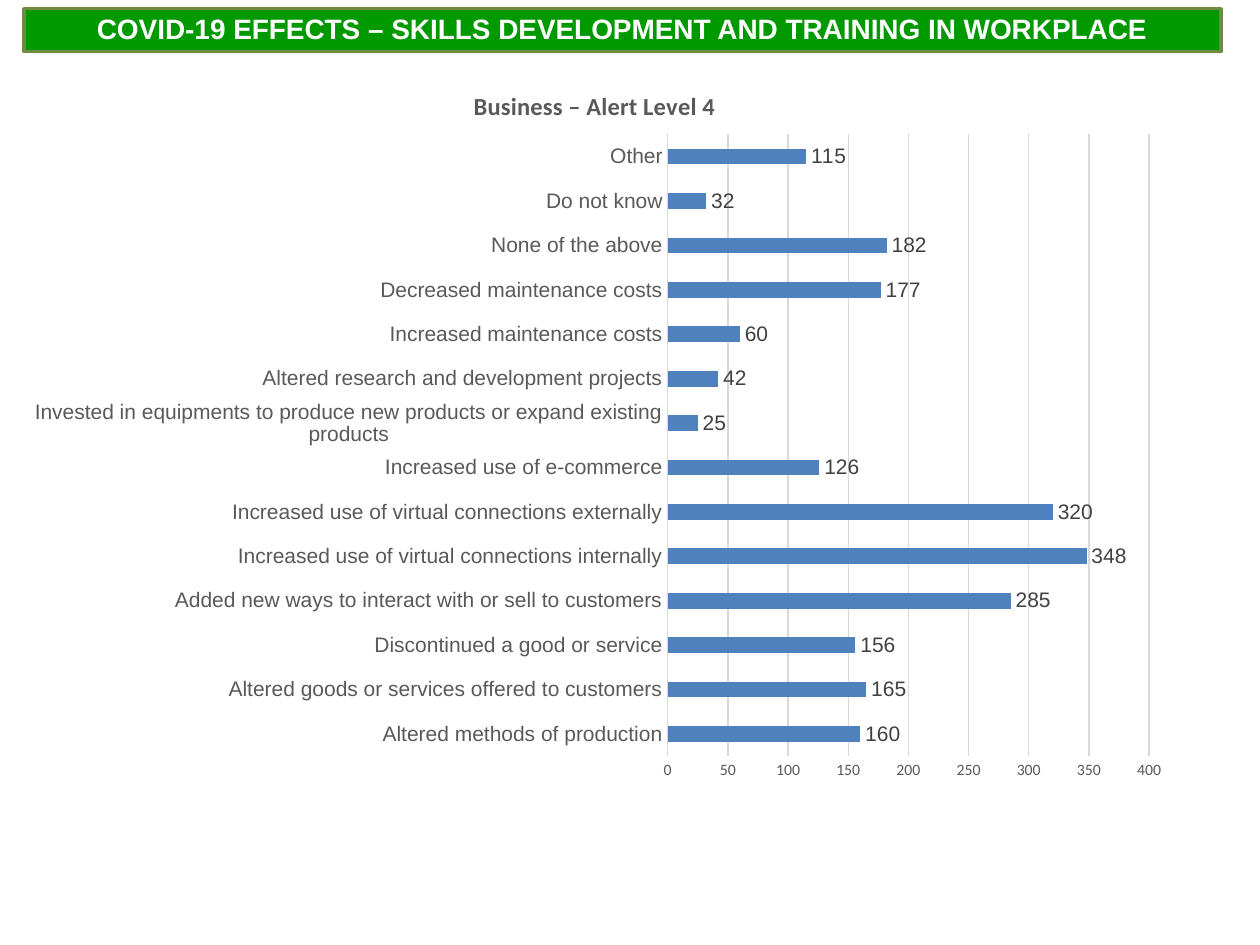
from dataclasses import dataclass

from lxml.etree import SubElement
from pptx import Presentation
from pptx.chart.data import CategoryChartData
from pptx.dml.color import RGBColor
from pptx.enum.chart import XL_CHART_TYPE as ChartType
from pptx.enum.chart import XL_LABEL_POSITION as LabelPosition
from pptx.enum.chart import XL_TICK_MARK as TickMark
from pptx.enum.shapes import MSO_SHAPE as ShapeKind
from pptx.enum.text import MSO_ANCHOR as Anchor
from pptx.enum.text import MSO_AUTO_SIZE as AutoSize
from pptx.enum.text import PP_ALIGN as Align
from pptx.oxml.ns import qn
from pptx.util import Pt


@dataclass(frozen=True)
class Theme:
    """Colours, fonts and type sizes of the slide."""
    banner: str = "009900"
    banner_line: str = "738A42"
    white: str = "FFFFFF"
    bar: str = "4F81BD"
    grid: str = "D9D9D9"
    axis_text: str = "595959"
    value_text: str = "404040"
    label_font: str = "Arial"
    chart_font: str = "Calibri"
    banner_size: int = 16
    title_size: int = 14
    label_size: int = 12
    scale_size: int = 9
    base_size: int = 10


THEME = Theme()
BANNER_TEXT = "COVID-19 EFFECTS – SKILLS DEVELOPMENT AND TRAINING IN WORKPLACE"
CHART_TITLE = "Business – Alert Level 4"
RESPONSES = {
    "Altered methods of production": 160,
    "Altered goods or services offered to customers": 165,
    "Discontinued a good or service": 156,
    "Added new ways to interact with or sell to customers": 285,
    "Increased use of virtual connections internally": 348,
    "Increased use of virtual connections externally": 320,
    "Increased use of e-commerce": 126,
    "Invested in equipments to produce new products or expand existing products": 25,
    "Altered research and development projects": 42,
    "Increased maintenance costs": 60,
    "Decreased maintenance costs": 177,
    "None of the above": 182,
    "Do not know": 32,
    "Other": 115,
}


def style_font(font, name, size, color, bold=False):
    """Set the face, size, colour and weight of a font."""
    font.name = name
    font.size = Pt(size)
    font.bold = bold
    font.color.rgb = RGBColor.from_string(color)


def style_line(line, color, width):
    """Set a solid line colour and width."""
    line.color.rgb = RGBColor.from_string(color)
    line.width = Pt(width)


def place(element, index, **fractions):
    """Give a chart part a manual layout in fractions of the chart."""
    for old in element.findall(qn("c:layout")):
        element.remove(old)
    layout = SubElement(element, qn("c:layout"))
    element.insert(index, layout)
    manual = SubElement(layout, qn("c:manualLayout"))
    settings = {"xMode": "edge", "yMode": "edge", **fractions}
    if "w" in fractions:
        settings = {"layoutTarget": "inner", **settings}
    for tag, value in settings.items():
        SubElement(manual, qn(f"c:{tag}")).set("val", str(value))


def style_title(chart):
    """Write and place the chart title."""
    title = chart.chart_title
    title.text_frame.text = CHART_TITLE
    run = title.text_frame.paragraphs[0].runs[0]
    style_font(run.font, THEME.chart_font, THEME.title_size, THEME.axis_text, True)
    title.include_in_layout = False
    place(title._element, 1, x=0.39, y=0.04)


def style_axes(chart):
    """Format the category axis, the value axis and the gridlines."""
    for axis in (chart.category_axis, chart.value_axis):
        axis.major_tick_mark = axis.minor_tick_mark = TickMark.NONE
    categories, values = chart.category_axis, chart.value_axis
    style_font(categories.tick_labels.font, THEME.label_font, THEME.label_size, THEME.axis_text)
    style_line(categories.format.line, THEME.grid, 0.75)
    style_font(values.tick_labels.font, THEME.chart_font, THEME.scale_size, THEME.axis_text)
    values.minimum_scale, values.maximum_scale, values.major_unit = 0, 400, 50
    values.format.line.fill.background()
    values.has_major_gridlines = True
    style_line(values.major_gridlines.format.line, THEME.grid, 0.75)


def style_bars(plot):
    """Colour the bars and label them with their values."""
    plot.gap_width = 182
    plot.vary_by_categories = False
    fill = plot.series[0].format.fill
    fill.solid()
    fill.fore_color.rgb = RGBColor.from_string(THEME.bar)
    plot.has_data_labels = True
    labels = plot.data_labels
    labels.show_value = True
    labels.position = LabelPosition.OUTSIDE_END
    style_font(labels.font, THEME.label_font, THEME.label_size, THEME.value_text)


def add_response_chart(slide):
    """Add the bar chart of business responses."""
    data = CategoryChartData()
    data.categories = list(RESPONSES)
    data.add_series("Series 1", list(RESPONSES.values()))
    chart = slide.shapes.add_chart(
        ChartType.BAR_CLUSTERED, Pt(6.5), Pt(31.7), Pt(671), Pt(422), data).chart
    chart.has_legend = False
    chart.font.name = THEME.chart_font
    chart.font.size = Pt(THEME.base_size)
    style_title(chart)
    style_axes(chart)
    style_bars(chart.plots[0])
    place(chart._chartSpace.chart.plotArea, 0, x=0.559, y=0.107, w=0.41, h=0.842)


def add_banner(slide):
    """Add the heading banner."""
    shape = slide.shapes.add_shape(
        ShapeKind.RECTANGLE, Pt(13.7), Pt(5), Pt(684), Pt(24.5))
    shape.shadow.inherit = False
    shape.fill.solid()
    shape.fill.fore_color.rgb = RGBColor.from_string(THEME.banner)
    style_line(shape.line, THEME.banner_line, 2)
    frame = shape.text_frame
    frame.text = BANNER_TEXT
    frame.word_wrap = True
    frame.auto_size = AutoSize.SHAPE_TO_FIT_TEXT
    frame.vertical_anchor = Anchor.MIDDLE
    paragraph = frame.paragraphs[0]
    paragraph.alignment = Align.CENTER
    paragraph.line_spacing = 0.9
    style_font(paragraph.runs[0].font, THEME.label_font, THEME.banner_size, THEME.white, True)


def main():
    """Build and save the slide."""
    presentation = Presentation()
    presentation.slide_width, presentation.slide_height = Pt(720), Pt(540)
    slide = presentation.slides.add_slide(presentation.slide_layouts[6])
    add_response_chart(slide)
    add_banner(slide)
    presentation.save("out.pptx")


if __name__ == "__main__":
    main()
